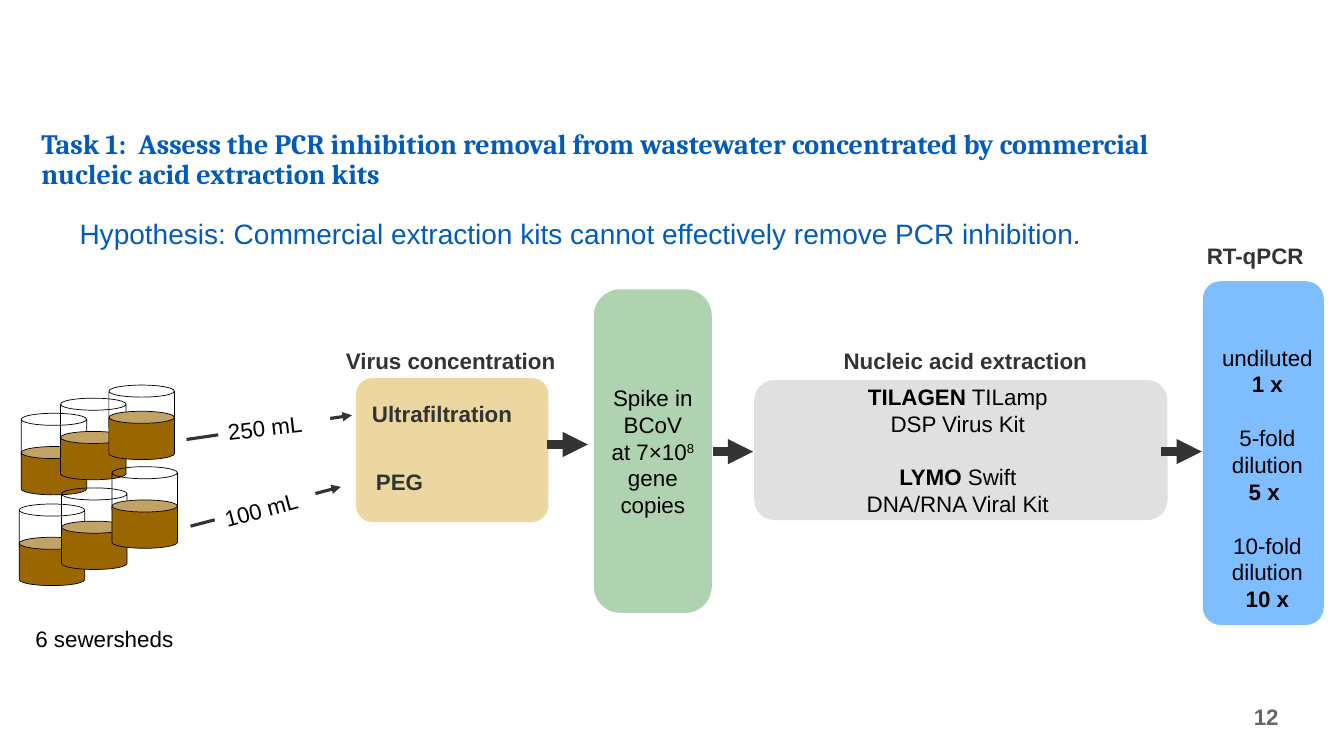
from dataclasses import dataclass

from lxml.etree import SubElement
from pptx import Presentation
from pptx.dml.color import RGBColor
from pptx.enum.shapes import MSO_CONNECTOR as Connector, MSO_SHAPE as Shape
from pptx.enum.text import MSO_ANCHOR as Anchor, MSO_AUTO_SIZE as AutoSize, PP_ALIGN as Align
from pptx.oxml.ns import qn
from pptx.util import Inches, Pt


@dataclass(frozen=True)
class Theme:
    """Colours, fonts and type sizes of the slide."""
    heading: str = "005BBB"
    label: str = "333333"
    text: str = "000000"
    number: str = "666666"
    paper: str = "FFFFFF"
    concentration: str = "EDD7A1"
    spike: str = "0D7912"
    extraction: str = "E0E0E0"
    pcr: str = "7EBDFF"
    sewage: str = "996600"
    title_font: str = "Cambria"
    body_font: str = "Arial"
    large: int = 20
    normal: int = 16


THEME = Theme()


def rgb(colour):
    """Turn a hex string into a colour."""
    return RGBColor.from_string(colour)


def place(shape, left, top, width, height):
    """Move and size a shape, in inches."""
    shape.left, shape.top = Inches(left), Inches(top)
    shape.width, shape.height = Inches(width), Inches(height)


def style(paragraph, colour, size=THEME.normal, bold=None, font=THEME.body_font):
    """Set the font of a whole paragraph."""
    paragraph.font.name = font
    paragraph.font.size = Pt(size)
    paragraph.font.bold = bold
    paragraph.font.color.rgb = rgb(colour)


def add_text(slide, box, text, colour=THEME.text, size=THEME.normal, bold=False,
             align=Align.CENTER, anchor=Anchor.TOP):
    """Add a text box holding one paragraph and return it."""
    label = slide.shapes.add_textbox(*map(Inches, box))
    frame = label.text_frame
    frame.word_wrap = True
    frame.vertical_anchor = anchor
    paragraph = frame.paragraphs[0]
    paragraph.text = text
    paragraph.alignment = align
    style(paragraph, colour, size, bold)
    return label


def add_groups(slide, box, groups):
    """Add centred lines of (text, bold) runs, with a line's gap between groups."""
    frame = slide.shapes.add_textbox(*map(Inches, box)).text_frame
    frame.word_wrap = True
    paragraph = None
    for group in groups:
        for index, line in enumerate(group):
            first = paragraph is None
            paragraph = frame.paragraphs[0] if first else frame.add_paragraph()
            paragraph.alignment = Align.CENTER
            if index == 0 and not first:
                paragraph.space_before = Pt(THEME.normal * 1.2)
            for text, bold in line:
                run = paragraph.add_run()
                run.text = text
                run.font.bold = bold
            style(paragraph, THEME.text)


def add_shape(slide, kind, box, fill=None, outline=None):
    """Add a preset shape without shadow and return it."""
    shape = slide.shapes.add_shape(kind, *map(Inches, box))
    shape.shadow.inherit = False
    if fill:
        shape.fill.solid()
        shape.fill.fore_color.rgb = rgb(fill)
    else:
        shape.fill.background()
    if outline:
        shape.line.color.rgb = rgb(outline)
        shape.line.width = Pt(0.5)
    else:
        shape.line.fill.background()
    return shape


def add_stage(slide, box, fill, rounding):
    """Add the rounded panel of one process stage."""
    panel = add_shape(slide, Shape.ROUNDED_RECTANGLE, box, fill)
    panel.adjustments[0] = rounding
    return panel


def add_arrow(slide, start, end, width):
    """Add a straight arrow between two points."""
    arrow = slide.shapes.add_connector(Connector.STRAIGHT, *map(Inches, start + end))
    arrow.line.color.rgb = rgb(THEME.label)
    arrow.line.width = Pt(width)
    SubElement(arrow.line._get_or_add_ln(), qn("a:tailEnd"), type="triangle")
    SubElement(arrow._element.spPr, qn("a:effectLst"))


def add_beaker(slide, left, top, level=0.33):
    """Add a clear beaker with sewage filled from the given level down."""
    add_shape(slide, Shape.CAN, (left, top, 0.65, 0.48), None, THEME.text)
    add_shape(slide, Shape.CAN, (left, top + level, 0.65, 0.48), THEME.sewage, THEME.text)


def add_title(slide, text):
    """Fill and format the title placeholder."""
    title = slide.shapes.title
    place(title, 0.31, 1.23, 12.09, 0.71)
    frame = title.text_frame
    frame.auto_size = AutoSize.NONE
    frame.vertical_anchor = Anchor.BOTTOM
    paragraph = frame.paragraphs[0]
    paragraph.text = text
    paragraph.alignment = Align.LEFT
    paragraph.line_spacing = 0.9
    style(paragraph, THEME.heading, THEME.large, True, THEME.title_font)


def add_spike(slide):
    """Add the translucent spike-in stage with its text."""
    panel = add_stage(slide, (5.89, 2.87, 1.17, 3.21), THEME.spike, 0.225)
    colour = panel._element.spPr.find(qn("a:solidFill"))[0]
    SubElement(colour, qn("a:alpha"), val="33000")
    frame = panel.text_frame
    frame.word_wrap = True
    frame.vertical_anchor = Anchor.MIDDLE
    paragraph = frame.paragraphs[0]
    paragraph.alignment = Align.CENTER
    for text in ("Spike in BCoV at 7×10", "8", " gene copies"):
        run = paragraph.add_run()
        run.text = text
        if text == "8":
            run.font._element.set("baseline", "30000")
    style(paragraph, THEME.text)


def add_sampling(slide):
    """Add the sewershed beakers and the volumes drawn from them."""
    volumes = (((1.85, 4.36), (3.49, 4.12), (2.16, 4.05, 1.12, 0.37), "250 mL", 353.5),
               ((1.89, 5.22), (3.38, 4.83), (2.12, 4.86, 1.03, 0.37), "100 mL", 345))
    for start, end, box, volume, angle in volumes:
        add_arrow(slide, start, end, 2.25)
        label = add_text(slide, box, volume, align=Align.LEFT)
        label.fill.solid()
        label.fill.fore_color.rgb = rgb(THEME.paper)
        label.rotation = angle
    for left, top in ((0.19, 5), (0.21, 4.1), (0.6, 3.95)):
        add_beaker(slide, left, top)
    add_beaker(slide, 1.08, 3.82, 0.26)
    for left, top in ((0.61, 4.84), (1.11, 4.63)):
        add_beaker(slide, left, top)
    add_text(slide, (0.07, 6.15, 1.93, 0.37), "6 sewersheds")


def main():
    """Build and save the slide."""
    deck = Presentation()
    deck.slide_width, deck.slide_height = Inches(13.33), Inches(7.5)
    slide = deck.slides.add_slide(deck.slide_layouts[5])

    add_title(slide, "Task 1:  Assess the PCR inhibition removal from wastewater "
                     "concentrated by commercial nucleic acid extraction kits")
    hypothesis = add_text(
        slide, (0.69, 2, 11.59, 0.5),
        "Hypothesis: Commercial extraction kits cannot effectively remove PCR inhibition.",
        THEME.heading, THEME.large, align=Align.LEFT)
    hypothesis.text_frame.paragraphs[0].line_spacing = 1.3

    add_stage(slide, (11.93, 2.79, 1.2, 3.41), THEME.pcr, 0.146)
    add_stage(slide, (7.48, 3.77, 4.1, 1.39), THEME.extraction, 0.146)
    add_stage(slide, (3.53, 3.75, 1.91, 1.43), THEME.concentration, 0.117)
    add_sampling(slide)
    add_spike(slide)

    for box, heading in (((3.2, 3.39, 2.54, 0.37), "Virus concentration"),
                         ((8.21, 3.39, 2.73, 0.37), "Nucleic acid extraction"),
                         ((11.72, 2.35, 1.46, 0.37), "RT-qPCR")):
        add_text(slide, box, heading, THEME.label, bold=True)
    for left, top, method in ((3.59, 3.92, "Ultrafiltration"), (3.63, 4.6, "PEG")):
        add_text(slide, (left, top, 1.75, 0.37), method, THEME.label, bold=True,
                 align=Align.LEFT)

    add_groups(slide, (8.48, 3.75, 2.04, 1.45), (
        ([("TILAGEN", True), (" TILamp", False)], [("DSP Virus Kit", False)]),
        ([("LYMO ", True), ("Swift", False)], [("DNA/RNA Viral Kit", False)])))
    add_groups(slide, (11.84, 3.36, 1.46, 2.79), [
        ([(dilution, False)], [(factor, True)])
        for dilution, factor in (("undiluted", "1 x"), ("5-fold dilution", "5 x "),
                                 ("10-fold dilution", "10 x"))])

    for left, top in ((5.43, 4.41), (7.07, 4.48), (11.52, 4.48)):
        add_arrow(slide, (left, top), (left + 0.4, top), 6)
    add_text(slide, (8.28, 6.91, 4.5, 0.4), "12", THEME.number, bold=True,
             align=Align.RIGHT, anchor=Anchor.MIDDLE)
    deck.save("out.pptx")


if __name__ == "__main__":
    main()
